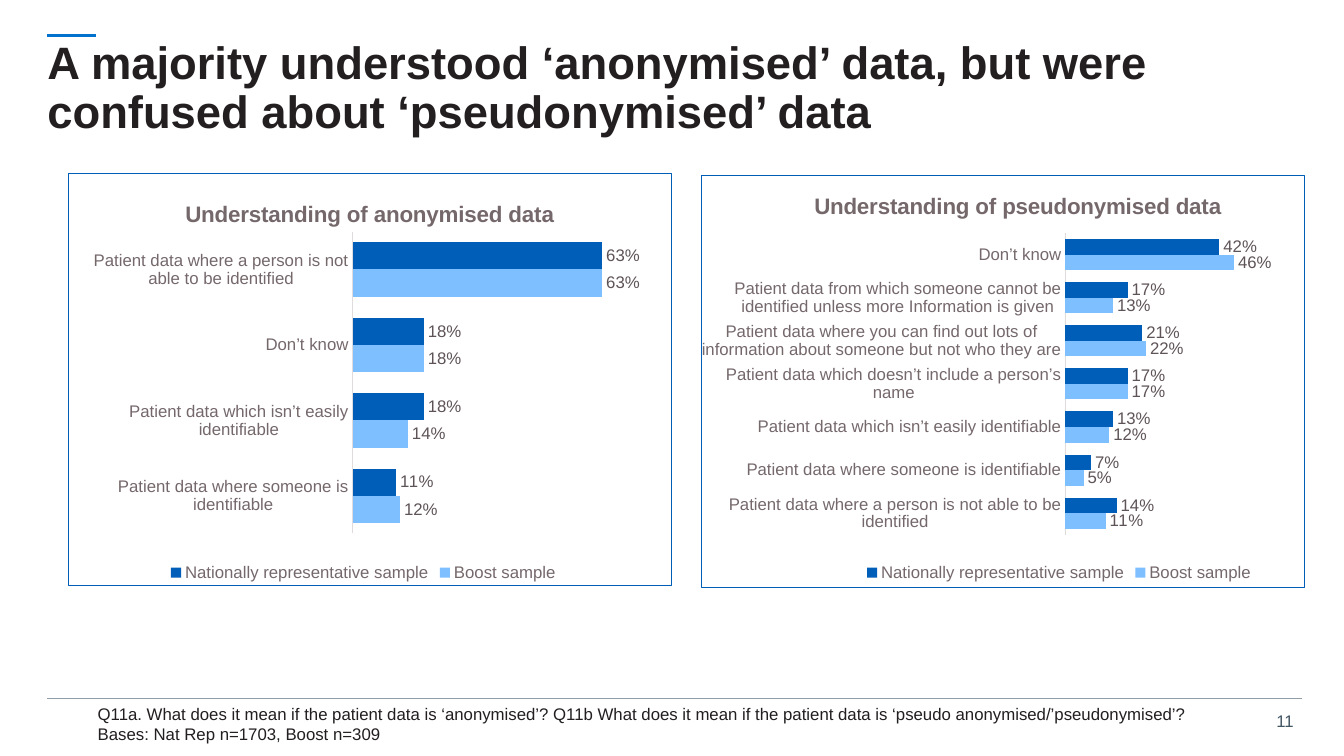
from dataclasses import dataclass

from lxml import etree
from pptx import Presentation
from pptx.chart import data as cd
from pptx.dml import color
from pptx.enum import chart as ec, shapes, text
from pptx.oxml import ns
from pptx.util import Inches, Pt

COLORS = {
    "ink": "231F20", "accent": "0072CE", "rule": "919EA8", "page": "425563",
    "frame": "005EB8", "white": "FFFFFF", "muted": "75686B", "label": "5E5356",
    "axis": "E0DCDD", "boost": "7DBFFF", "national": "005EB8",
}
FONT = "Arial"
SERIES = (("Boost sample", "boost"), ("Nationally representative sample", "national"))


@dataclass
class Rule:
    x1: float
    x2: float
    y: float
    color: str
    width: float


@dataclass
class Label:
    box: tuple[float, ...]
    lines: tuple[str, ...]
    size: float
    color: str = "ink"
    align: text.PP_ALIGN = text.PP_ALIGN.LEFT


@dataclass
class Panel:
    frame: tuple[float, ...]
    box: tuple[float, ...]
    title: str
    title_at: tuple[float, ...]  # share of the chart: x, y
    plot: tuple[float, ...]      # share of the chart: x, y, w, h
    top: float                   # end of the value axis
    rows: tuple[tuple[str, float, float], ...]  # category, boost, national


RULES = (Rule(0.47, 0.95, 0.35, "accent", 2), Rule(0.47, 12.91, 6.93, "rule", 0.5))

HEADING = Label(
    (0.47, 0.39, 12.47, 1),
    ("A majority understood ‘anonymised’ data, but were confused about ‘pseudonymised’ data",),
    32.4)
FOOTER = (
    Label((0.87, 6.93, 11.08, 0.5), (
        "Q11a. What does it mean if the patient data is ‘anonymised’? "
        "Q11b What does it mean if the patient data is ‘pseudo anonymised/’pseudonymised’?",
        "Bases: Nat Rep n=1703, Boost n=309"), 12),
    Label((12.52, 7, 0.41, 0.3), ("11",), 12, "page", text.PP_ALIGN.RIGHT),
)
PANELS = (
    Panel((0.68, 1.72, 5.98, 4.09), (0.78, 1.78, 5.65, 4.03),
          "Understanding of anonymised data", (0.18, 0.04), (0.481, 0.129, 0.487, 0.743), 0.7, (
              ("Patient data where someone is identifiable", 0.12, 0.11),
              ("Patient data which isn’t easily identifiable", 0.14, 0.18),
              ("Don’t know", 0.18, 0.18),
              ("Patient data where a person is not able to be identified", 0.63, 0.63))),
    Panel((6.96, 1.74, 5.98, 4.09), (6.96, 1.78, 7.07, 4.03),
          "Understanding of pseudonymised data", (0.15, 0.02), (0.509, 0.132, 0.258, 0.743), 0.5, (
              ("Patient data where a person is not able to be identified", 0.11, 0.14),
              ("Patient data where someone is identifiable", 0.05, 0.07),
              ("Patient data which isn’t easily identifiable", 0.12, 0.13),
              ("Patient data which doesn’t include a person’s name", 0.17, 0.17),
              ("Patient data where you can find out lots of information about someone "
               "but not who they are", 0.22, 0.21),
              ("Patient data from which someone cannot be identified unless more "
               "Information is given", 0.13, 0.17),
              ("Don’t know", 0.46, 0.42))),
)


def rgb(name: str) -> color.RGBColor:
    return color.RGBColor.from_string(COLORS[name])


def set_font(font, size: float, name: str, bold: bool = False) -> None:
    font.name, font.size, font.bold = FONT, Pt(size), bold
    font.color.rgb = rgb(name)


def add_rule(s, rule: Rule) -> None:
    line = s.shapes.add_connector(
        shapes.MSO_CONNECTOR.STRAIGHT,
        Inches(rule.x1), Inches(rule.y), Inches(rule.x2), Inches(rule.y))
    line.line.color.rgb = rgb(rule.color)
    line.line.width = Pt(rule.width)
    etree.SubElement(line._element.spPr, ns.qn("a:effectLst"))


def add_label(s, label: Label, bold: bool = False):
    tf = s.shapes.add_textbox(*map(Inches, label.box)).text_frame
    tf.word_wrap = False
    for i, line in enumerate(label.lines):
        p = tf.paragraphs[0] if i == 0 else tf.add_paragraph()
        p.alignment = label.align
        r = p.add_run()
        r.text = line
        set_font(r.font, label.size, label.color, bold)
    return tf


def add_heading(s, label: Label) -> None:
    tf = add_label(s, label, bold=True)
    tf.word_wrap = True
    tf.vertical_anchor = text.MSO_ANCHOR.MIDDLE
    tf.margin_left = tf.margin_top = tf.margin_right = tf.margin_bottom = 0
    tf.paragraphs[0].line_spacing = 0.9


def place(part, index: int, shares: tuple[float, ...], inner: bool = False) -> None:
    """Give a chart part a manual layout."""
    layout = part.find(ns.qn("c:layout"))
    if layout is None:
        layout = etree.Element(ns.qn("c:layout"))
        part.insert(index, layout)
    manual = etree.SubElement(layout, ns.qn("c:manualLayout"))
    settings = [("layoutTarget", "inner")] if inner else []
    settings += [("xMode", "edge"), ("yMode", "edge")]
    settings += zip("xywh", map(str, shares))
    for tag, value in settings:
        etree.SubElement(manual, ns.qn(f"c:{tag}")).set("val", value)


def add_frame(s, panel: Panel) -> None:
    sp = s.shapes.add_shape(shapes.MSO_SHAPE.RECTANGLE, *map(Inches, panel.frame))
    sp.shadow.inherit = False
    sp.fill.solid()
    sp.fill.fore_color.rgb = rgb("white")
    sp.line.color.rgb = rgb("frame")
    sp.line.width = Pt(1)


def add_panel_chart(s, panel: Panel) -> None:
    categories, *columns = zip(*panel.rows)
    data = cd.CategoryChartData(number_format="0%")
    data.categories = categories
    for (name, _), values in zip(SERIES, columns):
        data.add_series(name, values)
    chart = s.shapes.add_chart(
        ec.XL_CHART_TYPE.BAR_CLUSTERED, *map(Inches, panel.box), data).chart
    set_font(chart.font, 10, "ink")

    # Title and plot area
    chart.has_title = True
    r = chart.chart_title.text_frame.paragraphs[0].add_run()
    r.text = panel.title
    set_font(r.font, 16, "muted", bold=True)
    place(chart.chart_title._element, 1, panel.title_at)
    place(chart._chartSpace.chart.plotArea, 0, panel.plot, inner=True)

    # Legend
    chart.has_legend = True
    chart.legend.position = ec.XL_LEGEND_POSITION.BOTTOM
    chart.legend.include_in_layout = False
    set_font(chart.legend.font, 12, "muted")

    # Axes
    axis = chart.category_axis
    axis.major_tick_mark = axis.minor_tick_mark = ec.XL_TICK_MARK.NONE
    axis.format.line.color.rgb = rgb("axis")
    axis.format.line.width = Pt(0.75)
    set_font(axis.tick_labels.font, 12, "muted")
    values_axis = chart.value_axis
    values_axis.visible = values_axis.has_major_gridlines = False
    values_axis.minimum_scale, values_axis.maximum_scale = 0, panel.top

    # Bars
    plot = chart.plots[0]
    plot.gap_width, plot.overlap, plot.vary_by_categories = 77, 0, False
    for series, (_, fill) in zip(plot.series, SERIES):
        series.format.fill.solid()
        series.format.fill.fore_color.rgb = rgb(fill)
        labels = series.data_labels
        labels.show_value = True
        labels.number_format, labels.number_format_is_linked = "0%", False
        labels.position = ec.XL_LABEL_POSITION.OUTSIDE_END
        set_font(labels.font, 12, "label")


def main() -> None:
    prs = Presentation()
    prs.slide_width, prs.slide_height = Inches(13.33), Inches(7.5)
    s = prs.slides.add_slide(prs.slide_layouts[6])
    for rule in RULES:
        add_rule(s, rule)
    add_heading(s, HEADING)
    for panel in PANELS:
        add_frame(s, panel)
    for panel in PANELS:
        add_panel_chart(s, panel)
    for label in FOOTER:
        add_label(s, label)
    prs.save("out.pptx")


if __name__ == "__main__":
    main()
